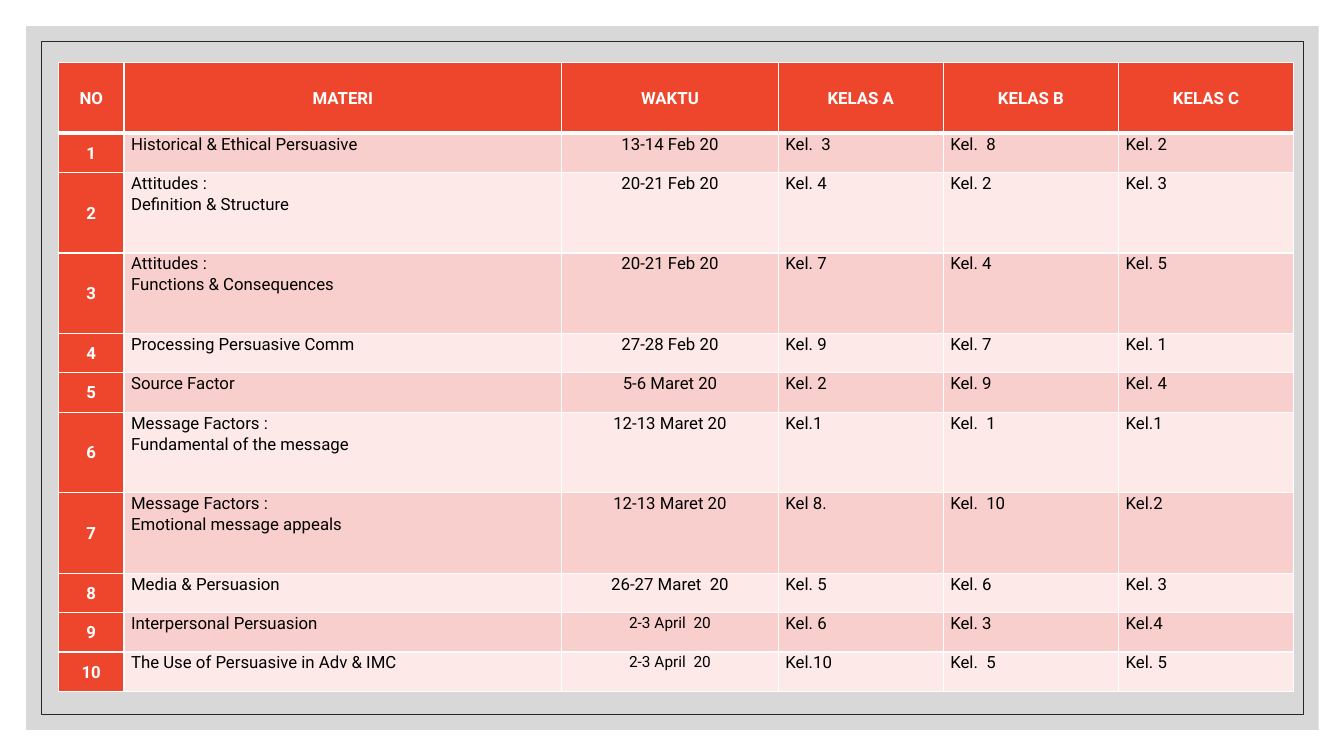
from dataclasses import dataclass

from lxml import etree
from pptx import Presentation
from pptx.dml.color import RGBColor
from pptx.enum.shapes import MSO_SHAPE
from pptx.enum.text import MSO_ANCHOR, PP_ALIGN
from pptx.oxml.ns import qn
from pptx.util import Inches, Pt

RECTANGLE = MSO_SHAPE.RECTANGLE
MIDDLE, TOP = MSO_ANCHOR.MIDDLE, MSO_ANCHOR.TOP
CENTER, JUSTIFY = PP_ALIGN.CENTER, PP_ALIGN.JUSTIFY


@dataclass(frozen=True)
class Theme:
    font: str = "Roboto"
    body_size: float = 12
    april_size: float = 11
    line_spacing: float = 1.07
    accent: str = "EE462D"
    bands: tuple[str, str] = ("F8CFCD", "FCE9E8")
    light: str = "FFFFFF"
    dark: str = "000000"
    panel: str = "BFBFBF"
    panel_opacity: int = 60
    outline: str = "262626"
    outline_width: float = 0.5
    grid_width: float = 1
    header_rule: float = 3


@dataclass(frozen=True)
class Area:
    """Percentages of the slide's width and height."""
    left: float
    top: float
    width: float
    height: float

    def box(self) -> tuple[int, int, int, int]:
        return (int(SLIDE_WIDTH * self.left / 100), int(SLIDE_HEIGHT * self.top / 100),
                int(SLIDE_WIDTH * self.width / 100), int(SLIDE_HEIGHT * self.height / 100))


@dataclass(frozen=True)
class Session:
    topic: str
    date: str
    class_a: str
    class_b: str
    class_c: str
    date_size: float = Theme.body_size

    def texts(self) -> tuple[str, ...]:
        return self.topic, self.date, self.class_a, self.class_b, self.class_c


@dataclass(frozen=True)
class CellStyle:
    fill: str
    color: str
    bold: bool
    align: PP_ALIGN
    anchor: MSO_ANCHOR
    size: float
    top_rule: float
    bottom_rule: float


THEME = Theme()
SLIDE_WIDTH, SLIDE_HEIGHT = Inches(13.33), Inches(7.5)
PANEL = Area(1.95, 3.47, 96.17, 93.07)
FRAME = Area(3.08, 5.47, 93.92, 89.07)
SCHEDULE = Area(4.35, 8.27, 91.9, 83.2)
COLUMN_SHARES = (5.31, 35.43, 17.55, 13.35, 14.2, 14.16)
HEADER_SHARE, SINGLE_SHARE, DOUBLE_SHARE = 11.22, 6.25, 12.82
NUMBER_COLUMN, DATE_COLUMN = 0, 2
SIDE_MARGIN = Inches(0.07)

HEADINGS = ("NO", "MATERI", "WAKTU", "KELAS A", "KELAS B", "KELAS C")
SESSIONS = (
    Session("Historical & Ethical Persuasive", "13-14 Feb 20", "Kel.  3", "Kel.  8", "Kel. 2"),
    Session("Attitudes :\nDefinition & Structure", "20-21 Feb 20", "Kel. 4", "Kel. 2", "Kel. 3"),
    Session("Attitudes :\nFunctions & Consequences", "20-21 Feb 20", "Kel. 7", "Kel. 4", "Kel. 5"),
    Session("Processing Persuasive Comm", "27-28 Feb 20", "Kel. 9", "Kel. 7", "Kel. 1"),
    Session("Source Factor", "5-6 Maret 20", "Kel. 2", "Kel. 9", "Kel. 4"),
    Session("Message Factors :\nFundamental of the message", "12-13 Maret 20",
            "Kel.1", "Kel.  1", "Kel.1"),
    Session("Message Factors :\nEmotional message appeals", "12-13 Maret 20",
            "Kel 8.", "Kel.  10", "Kel.2"),
    Session("Media & Persuasion", "26-27 Maret  20", "Kel. 5", "Kel. 6", "Kel. 3"),
    Session("Interpersonal Persuasion", "2-3 April  20", "Kel. 6", "Kel. 3", "Kel.4",
            THEME.april_size),
    Session("The Use of Persuasive in Adv & IMC", "2-3 April  20", "Kel.10", "Kel.  5", "Kel. 5",
            THEME.april_size),
)


def rgb(color: str) -> RGBColor:
    return RGBColor.from_string(color)


def draw_backdrop(slide) -> None:
    panel = slide.shapes.add_shape(RECTANGLE, *PANEL.box())
    panel.shadow.inherit = False
    panel.line.fill.background()
    panel.fill.solid()
    panel.fill.fore_color.rgb = rgb(THEME.panel)
    color = panel.fill._xPr.find(f".//{qn('a:srgbClr')}")
    etree.SubElement(color, qn("a:alpha"), val=str(THEME.panel_opacity * 1000))

    frame = slide.shapes.add_shape(RECTANGLE, *FRAME.box())
    frame.shadow.inherit = False
    frame.fill.background()
    frame.line.color.rgb = rgb(THEME.outline)
    frame.line.width = Pt(THEME.outline_width)


def set_borders(cell, top: float, bottom: float) -> None:
    properties = cell._tc.get_or_add_tcPr()
    sides = {"L": THEME.grid_width, "R": THEME.grid_width, "T": top, "B": bottom}
    for position, (side, width) in enumerate(sides.items()):
        line = etree.Element(qn(f"a:ln{side}"), w=str(Pt(width)))
        fill = etree.SubElement(line, qn("a:solidFill"))
        etree.SubElement(fill, qn("a:srgbClr"), val=THEME.light)
        properties.insert(position, line)


def fill_cell(cell, text: str, style: CellStyle) -> None:
    cell.margin_left = cell.margin_right = SIDE_MARGIN
    cell.margin_top = cell.margin_bottom = 0
    cell.vertical_anchor = style.anchor
    cell.fill.solid()
    cell.fill.fore_color.rgb = rgb(style.fill)
    set_borders(cell, style.top_rule, style.bottom_rule)
    cell.text_frame.text = text
    for paragraph in cell.text_frame.paragraphs:
        paragraph.alignment = style.align
        paragraph.line_spacing = THEME.line_spacing
        paragraph.font.name = THEME.font
        paragraph.font.size = Pt(style.size)
        paragraph.font.bold = style.bold
        paragraph.font.color.rgb = rgb(style.color)


def cell_style(row: int, column: int) -> CellStyle:
    top = THEME.header_rule if row == 1 else THEME.grid_width
    bottom = THEME.header_rule if row == 0 else THEME.grid_width
    if row == 0 or column == NUMBER_COLUMN:
        return CellStyle(THEME.accent, THEME.light, True, CENTER, MIDDLE,
                         THEME.body_size, top, bottom)
    is_date = column == DATE_COLUMN
    return CellStyle(THEME.bands[(row - 1) % 2], THEME.dark, False,
                     CENTER if is_date else JUSTIFY, TOP,
                     SESSIONS[row - 1].date_size if is_date else THEME.body_size, top, bottom)


def draw_schedule(slide) -> None:
    left, top, width, height = SCHEDULE.box()
    lines = [HEADINGS] + [(str(number), *session.texts())
                          for number, session in enumerate(SESSIONS, 1)]
    row_shares = [HEADER_SHARE] + [DOUBLE_SHARE if "\n" in session.topic else SINGLE_SHARE
                                   for session in SESSIONS]
    schedule = slide.shapes.add_table(len(lines), len(HEADINGS), left, top, width, height).table
    for column, share in zip(schedule.columns, COLUMN_SHARES):
        column.width = int(width * share / 100)
    for row, share in zip(schedule.rows, row_shares):
        row.height = int(height * share / 100)
    for row, texts in enumerate(lines):
        for column, text in enumerate(texts):
            fill_cell(schedule.cell(row, column), text, cell_style(row, column))


def main() -> None:
    deck = Presentation()
    deck.slide_width, deck.slide_height = SLIDE_WIDTH, SLIDE_HEIGHT
    slide = deck.slides.add_slide(deck.slide_layouts[6])
    draw_backdrop(slide)
    draw_schedule(slide)
    deck.save("out.pptx")


if __name__ == "__main__":
    main()
